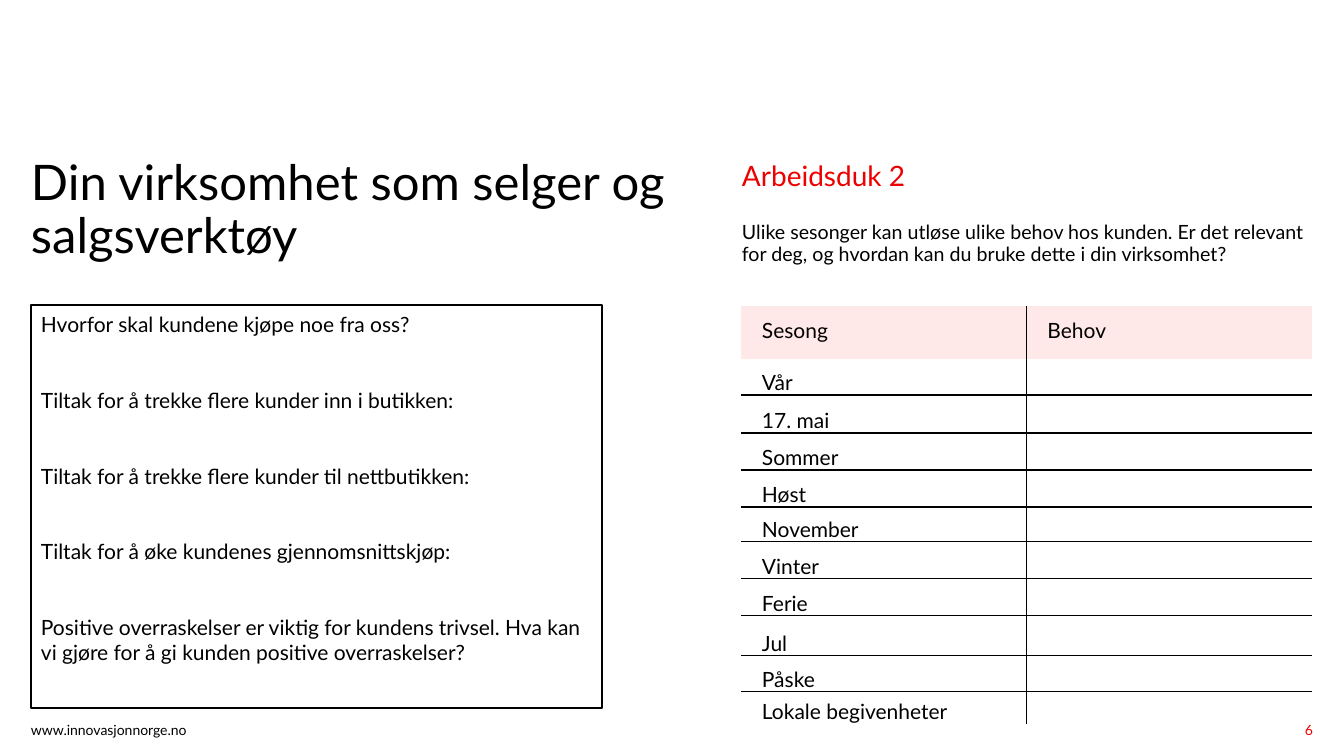
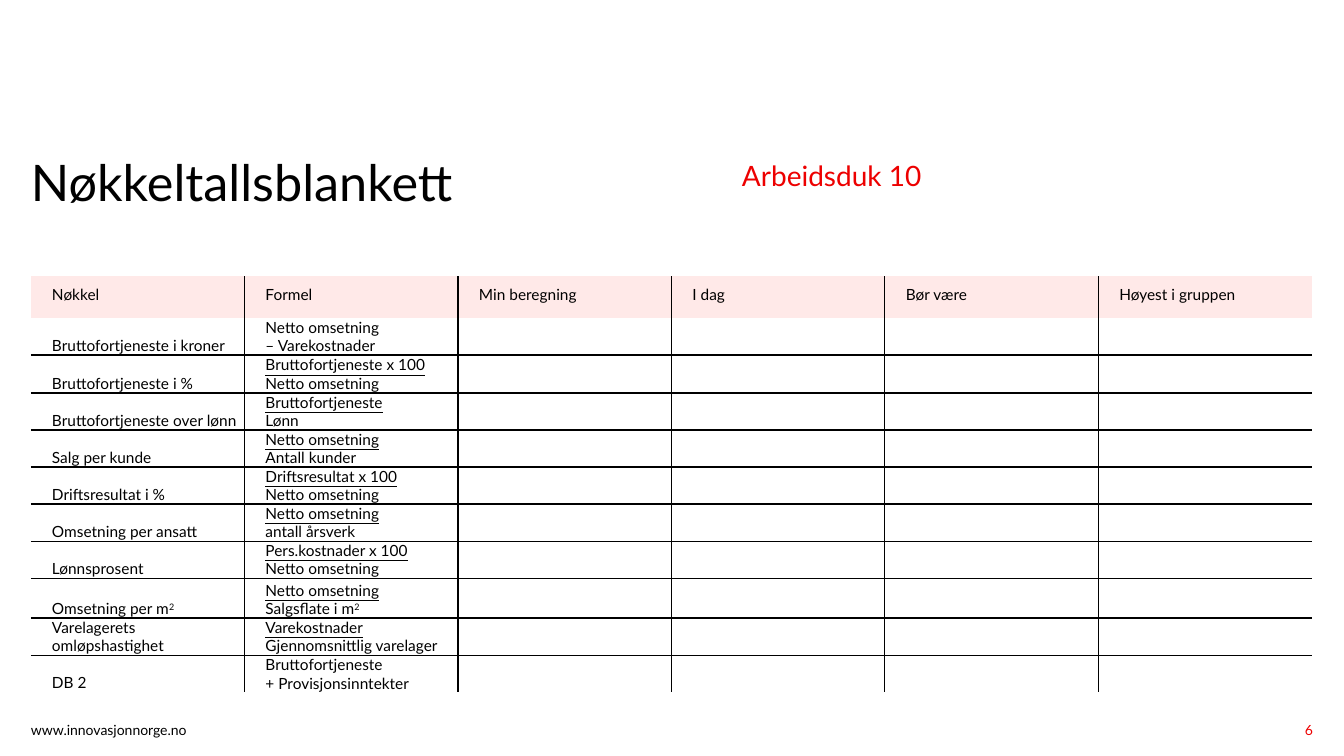
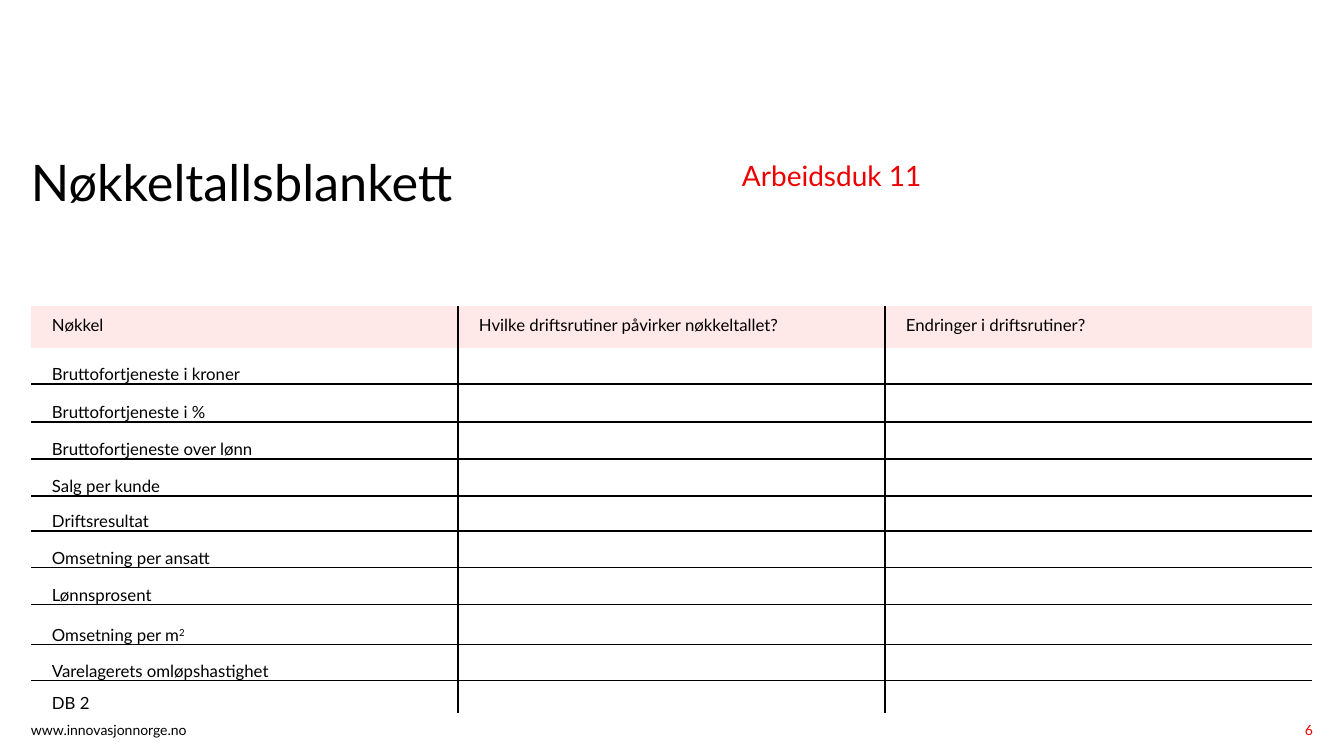
from dataclasses import dataclass
from typing import Sequence

import pptx
import pptx.dml.color
import pptx.enum.shapes
import pptx.enum.text
import pptx.oxml
import pptx.oxml.ns
import pptx.util

EMU_PER_PX = 914400 / 100.8
COLORS = {"text": "000000", "accent": "ED0000", "header": "FFE9E8", "line": "000000"}
FONT = "Lato"
MARGIN = 31
CONTENT_WIDTH = 1281
RIGHT_COLUMN = 742
HALF_WIDTH = 571
BODY_ROWS = (36, 38, 37, 37, 35, 37, 37, 40, 36, 32)
SUPERSCRIPT_MARK = "^"

PP_ALIGN = pptx.enum.text.PP_ALIGN
ANCHOR = pptx.enum.text.MSO_ANCHOR


@dataclass(frozen=True)
class Box:
    left: int
    top: int
    width: int
    height: int

    def emu(self) -> tuple:
        return px(self.left), px(self.top), px(self.width), px(self.height)


@dataclass(frozen=True)
class Line:
    """One paragraph of text; a mark before a character raises it."""
    text: str
    size: int
    color: str = "text"
    align: PP_ALIGN = PP_ALIGN.LEFT
    spacing: float = 1.0
    before: int = 0
    underline: bool = False


@dataclass(frozen=True)
class KeyFigure:
    name: str
    upper: str
    lower: str
    is_fraction: bool = True


@dataclass(frozen=True)
class Form:
    """A ruled table to fill in; each cell holds a list of lines."""
    left: int
    top: int
    width: int
    header_height: int
    size: int
    headings: Sequence[str]
    rows: Sequence[Sequence[Sequence[Line]]]
    min_row: int = 0


FOOTER_BOX = Box(MARGIN, 721, 287, 19)
NUMBER_BOX = Box(1204, 721, 109, 24)
WORKSHEET_BOX = Box(RIGHT_COLUMN, 162, HALF_WIDTH, 142)
QUESTION_FRAME = Box(MARGIN, 305, HALF_WIDTH, 403)
QUESTION_BOX = Box(MARGIN, 307, HALF_WIDTH, 367)

QUESTIONS = (
    "Hvorfor skal kundene kjøpe noe fra oss?",
    "Tiltak for å trekke flere kunder inn i butikken:",
    "Tiltak for å trekke flere kunder til nettbutikken:",
    "Tiltak for å øke kundenes gjennomsnittskjøp:",
    "Positive overraskelser er viktig for kundens trivsel. "
    "Hva kan vi gjøre for å gi kunden positive overraskelser?",
)
SEASONS = ("Vår", "17. mai", "Sommer", "Høst", "November", "Vinter", "Ferie",
           "Jul", "Påske", "Lokale begivenheter")
KEY_FIGURES = (
    KeyFigure("Bruttofortjeneste i kroner", "Netto omsetning", "– Varekostnader", False),
    KeyFigure("Bruttofortjeneste i %", "Bruttofortjeneste x 100", "Netto omsetning"),
    KeyFigure("Bruttofortjeneste over lønn", "Bruttofortjeneste", "Lønn"),
    KeyFigure("Salg per kunde", "Netto omsetning", "Antall kunder"),
    KeyFigure("Driftsresultat i %", "Driftsresultat x 100", "Netto omsetning"),
    KeyFigure("Omsetning per ansatt", "Netto omsetning", "antall årsverk"),
    KeyFigure("Lønnsprosent", "Pers.kostnader x 100", "Netto omsetning"),
    KeyFigure("Omsetning per m^2", "Netto omsetning", "Salgsflate i m^2"),
    KeyFigure("Varelagerets omløpshastighet", "Varekostnader", "Gjennomsnittlig varelager"),
    KeyFigure("DB 2", "Bruttofortjeneste", "+ Provisjonsinntekter", False),
)


def px(value: float) -> pptx.util.Emu:
    return pptx.util.Emu(round(value * EMU_PER_PX))


def rgb(name: str) -> pptx.dml.color.RGBColor:
    return pptx.dml.color.RGBColor.from_string(COLORS[name])


def style_paragraph(paragraph, line: Line) -> None:
    paragraph.alignment = line.align
    paragraph.line_spacing = line.spacing
    if line.before:
        paragraph.space_before = pptx.util.Pt(line.before)
    paragraph.font.name = FONT
    paragraph.font.size = pptx.util.Pt(line.size)
    paragraph.font.color.rgb = rgb(line.color)
    if line.underline:
        paragraph.font.underline = True


def write_lines(frame, lines: Sequence[Line]) -> None:
    frame.word_wrap = True
    for index, line in enumerate(lines):
        paragraph = frame.add_paragraph() if index else frame.paragraphs[0]
        style_paragraph(paragraph, line)
        base, _, raised = line.text.partition(SUPERSCRIPT_MARK)
        if base:
            paragraph.add_run().text = base
        if raised:
            run = paragraph.add_run()
            run.text = raised
            run._r.get_or_add_rPr().set("baseline", "30000")


def set_margins(target, left: int = 0, top: int = 0, right: int = 0, bottom: int = 0) -> None:
    target.margin_left, target.margin_top = px(left), px(top)
    target.margin_right, target.margin_bottom = px(right), px(bottom)


def add_text(slide, box: Box, lines: Sequence[Line], inset: tuple = (0, 0, 0, 0)) -> None:
    frame = slide.shapes.add_textbox(*box.emu()).text_frame
    set_margins(frame, *inset)
    frame.vertical_anchor = ANCHOR.TOP
    write_lines(frame, lines)


def add_worksheet(deck, title: Line, title_width: int, label: str, intro: str = ""):
    """Add a slide with its title, worksheet label, footer and number."""
    slide = deck.slides.add_slide(deck.slide_layouts[6])
    add_text(slide, FOOTER_BOX, [Line("www.innovasjonnorge.no", 10)])
    add_text(slide, Box(MARGIN, 158, title_width, 142), [title])
    lines = [Line(label, 20, "accent", spacing=0.9)]
    if intro:
        lines.append(Line(intro, 14, spacing=0.9, before=22))
    add_text(slide, WORKSHEET_BOX, lines)
    add_text(slide, NUMBER_BOX, [Line("6", 10, "accent", PP_ALIGN.RIGHT)])
    return slide


def rule_cell(cell, edges: dict) -> None:
    """Draw the edges that are on and blank out those that are off."""
    namespace = pptx.oxml.ns.nsdecls("a")
    properties = cell._tc.get_or_add_tcPr()
    for edge, visible in edges.items():
        paint = (f'<a:solidFill><a:srgbClr val="{COLORS["line"]}"/></a:solidFill>'
                 if visible else "<a:noFill/>")
        properties.append(pptx.oxml.parse_xml(
            f'<a:ln{edge} {namespace} w="12700">{paint}</a:ln{edge}>'))


def add_form(slide, form: Form) -> None:
    heights = [form.header_height] + [max(height, form.min_row) for height in BODY_ROWS]
    box = Box(form.left, form.top, form.width, sum(heights))
    columns = len(form.headings)
    table = slide.shapes.add_table(len(heights), columns, *box.emu()).table
    table.first_row = table.horz_banding = False
    for column in table.columns:
        column.width = px(form.width / columns)
    for row, height in zip(table.rows, heights):
        row.height = px(height)

    header = [[Line(heading, form.size)] for heading in form.headings]
    last_row, last_column = len(heights) - 1, columns - 1
    for r, contents in enumerate([header, *form.rows]):
        for c in range(columns):
            cell = table.cell(r, c)
            rule_cell(cell, {"L": c > 0, "R": c < last_column,
                             "T": r > 1, "B": 0 < r < last_row})
            if r == 0:
                cell.fill.solid()
                cell.fill.fore_color.rgb = rgb("header")
            else:
                cell.fill.background()
            set_margins(cell, 21, 0, 5, 0 if r else 4)
            cell.vertical_anchor = ANCHOR.BOTTOM if r else ANCHOR.MIDDLE
            if c < len(contents):
                write_lines(cell.text_frame, contents[c])


def add_questions(slide) -> None:
    frame = slide.shapes.add_shape(
        pptx.enum.shapes.MSO_SHAPE.RECTANGLE, *QUESTION_FRAME.emu())
    frame.shadow.inherit = False
    frame.fill.background()
    frame.line.color.rgb = rgb("line")
    frame.line.width = pptx.util.Pt(1)
    add_text(slide, QUESTION_BOX,
             [Line(question, 15, before=36 if index else 0)
              for index, question in enumerate(QUESTIONS)],
             inset=(10, 5, 10, 5))


def build_seasons(deck) -> None:
    slide = add_worksheet(
        deck, Line("Din virksomhet som selger og salgsverktøy", 35, spacing=0.9), 710,
        "Arbeidsduk 2",
        "Ulike sesonger kan utløse ulike behov hos kunden. Er det relevant for deg, "
        "og hvordan kan du bruke dette i din virksomhet?")
    add_form(slide, Form(RIGHT_COLUMN - 1, 306, HALF_WIDTH, 53, 15, ("Sesong", "Behov"),
                         [[[Line(season, 15)]] for season in SEASONS]))
    add_questions(slide)


def build_key_figures(deck) -> None:
    title = Line("Nøkkeltallsblankett", 36, spacing=0.9)
    calculation = add_worksheet(deck, title, 576, "Arbeidsduk 10")
    rows = [[[Line(figure.name, 11)],
             [Line(figure.upper, 11, underline=figure.is_fraction), Line(figure.lower, 11)]]
            for figure in KEY_FIGURES]
    headings = ("Nøkkel", "Formel", "Min beregning", "I dag", "Bør være", "Høyest i gruppen")
    add_form(calculation, Form(MARGIN, 276, CONTENT_WIDTH, 42, 11, headings, rows, min_row=37))

    routines = add_worksheet(deck, title, 576, "Arbeidsduk 11")
    names = ["Driftsresultat" if figure.name == "Driftsresultat i %" else figure.name
             for figure in KEY_FIGURES]
    headings = ("Nøkkel", "Hvilke driftsrutiner påvirker nøkkeltallet?",
                "Endringer i driftsrutiner?")
    add_form(routines, Form(MARGIN, 306, CONTENT_WIDTH, 42, 12, headings,
                            [[[Line(name, 12)]] for name in names]))


def main() -> None:
    deck = pptx.Presentation()
    deck.slide_width, deck.slide_height = px(1344), px(756)
    build_seasons(deck)
    build_key_figures(deck)
    deck.save("out.pptx")


if __name__ == "__main__":
    main()
